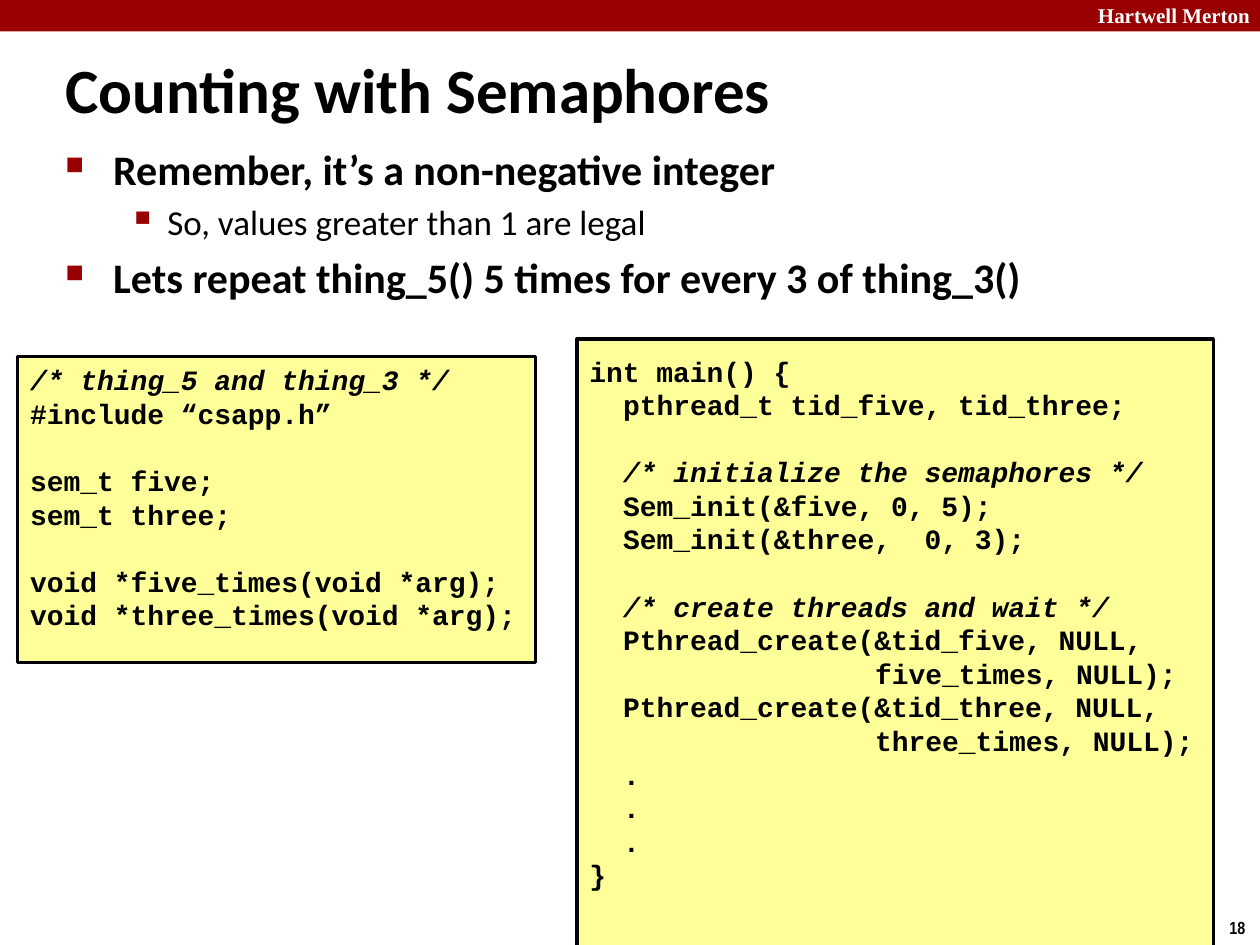
from lxml.etree import SubElement
from pptx import Presentation
from pptx.dml.color import RGBColor
from pptx.enum.shapes import MSO_SHAPE
from pptx.enum.text import MSO_ANCHOR, PP_ALIGN
from pptx.oxml.ns import qn
from pptx.util import Inches, Pt

RED = RGBColor(0x99, 0x00, 0x00)
YELLOW = RGBColor(0xFF, 0xFF, 0x99)
BLACK = RGBColor(0, 0, 0)
WHITE = RGBColor(255, 255, 255)

CODE_SIZE = 16
CODE_LINE = 19.2
CODE_CHARACTER = 0.6 * CODE_SIZE

BULLET_LEVELS = [
    {"margin": 0.38, "indent": -0.38, "size": 24, "bold": True, "mark": "■", "scale": 60},
    {"margin": 0.81, "indent": -0.31, "size": 20, "bold": False, "mark": "▪", "scale": 110},
]
BULLETS = [
    (0, "Remember, it’s a non-negative integer"),
    (1, "So, values greater than 1 are legal"),
    (0, "Lets repeat thing_5() 5 times for every 3 of thing_3()"),
]

DECLARATIONS = """\
/* thing_5 and thing_3 */
#include “csapp.h”

sem_t five;
sem_t three;

void *five_times(void *arg);
void *three_times(void *arg);"""

MAIN_FUNCTION = """\
int main() {
  pthread_t tid_five, tid_three;

  /* initialize the semaphores */
  Sem_init(&five, 0, 5);
  Sem_init(&three,  0, 3);

  /* create threads and wait */
  Pthread_create(&tid_five, NULL,
                 five_times, NULL);
  Pthread_create(&tid_three, NULL,
                 three_times, NULL);
  .
  .
  .
}"""


def set_font(paragraph, name, size, color=BLACK, bold=True, italic=False):
    font = paragraph.font
    font.name, font.size = name, Pt(size)
    font.bold, font.italic = bold, italic
    font.color.rgb = color


def set_indent(paragraph, margin, indent=0):
    properties = paragraph._p.get_or_add_pPr()
    properties.set("marL", str(int(margin)))
    properties.set("indent", str(int(indent)))
    return properties


def add_paragraphs(frame, count):
    return [frame.paragraphs[0]] + [frame.add_paragraph() for _ in range(count - 1)]


def add_text_box(slide, box):
    frame = slide.shapes.add_textbox(*map(Inches, box)).text_frame
    frame.word_wrap = True
    return frame


def add_label(slide, box, text, name, size, color=BLACK, align=PP_ALIGN.LEFT):
    frame = add_text_box(slide, box)
    frame.vertical_anchor = MSO_ANCHOR.MIDDLE
    paragraph = frame.paragraphs[0]
    paragraph.text, paragraph.alignment = text, align
    set_font(paragraph, name, size, color)


def add_rectangle(slide, box, color):
    shape = slide.shapes.add_shape(MSO_SHAPE.RECTANGLE, *map(Inches, box))
    shape.shadow.inherit = False
    shape.fill.solid()
    shape.fill.fore_color.rgb = color
    shape.line.fill.background()
    return shape


def add_bullets(slide, box, bullets):
    frame = add_text_box(slide, box)
    for paragraph, (depth, text) in zip(add_paragraphs(frame, len(bullets)), bullets):
        level = BULLET_LEVELS[depth]
        paragraph.text, paragraph.level = text, depth
        paragraph.space_before = Pt(0.2 * level["size"])
        set_font(paragraph, "Calibri", level["size"], bold=level["bold"])
        properties = set_indent(paragraph, Inches(level["margin"]), Inches(level["indent"]))
        defaults = properties.find(qn("a:defRPr"))
        color = SubElement(properties, qn("a:buClr"))
        SubElement(color, qn("a:srgbClr")).set("val", str(RED))
        scale = SubElement(properties, qn("a:buSzPct"))
        scale.set("val", str(level["scale"] * 1000))
        mark = SubElement(properties, qn("a:buChar"))
        mark.set("char", level["mark"])
        if defaults is not None:
            properties.append(defaults)


def add_code(slide, box, code, top_inset):
    shape = add_rectangle(slide, box, YELLOW)
    shape.line.color.rgb = BLACK
    shape.line.width = Pt(2)
    frame = shape.text_frame
    frame.word_wrap = True
    frame.vertical_anchor = MSO_ANCHOR.TOP
    frame.margin_top, frame.margin_bottom = Inches(top_inset), 0

    lines = code.splitlines()
    filled = [index for index, line in enumerate(lines) if line]
    previous = -1
    for paragraph, index in zip(add_paragraphs(frame, len(filled)), filled):
        text = lines[index].lstrip()
        paragraph.text, paragraph.alignment = text, PP_ALIGN.LEFT
        paragraph.line_spacing = Pt(CODE_LINE)
        paragraph.space_before = Pt(CODE_LINE * (index - previous - 1))
        set_indent(paragraph, Pt(CODE_CHARACTER * (len(lines[index]) - len(text))))
        set_font(paragraph, "Courier New", CODE_SIZE, italic=text.startswith("/*"))
        previous = index


def main():
    presentation = Presentation()
    presentation.slide_width, presentation.slide_height = Inches(10), Inches(7.5)
    slide = presentation.slides.add_slide(presentation.slide_layouts[6])

    add_rectangle(slide, (0, 0, 10, 0.25), RED)
    add_label(slide, (8.5, -0.03, 1.52, 0.3), "Hartwell Merton", "Times New Roman", 12,
              WHITE, PP_ALIGN.RIGHT)
    add_label(slide, (9.66, 7.23, 0.34, 0.27), "18", "Arial Narrow", 10)
    add_label(slide, (0.42, 0.39, 8.03, 0.63), "Counting with Semaphores", "Calibri", 36)
    add_bullets(slide, (0.42, 1.09, 9.35, 2.16), BULLETS)
    add_code(slide, (0.14, 2.83, 4.11, 2.43), DECLARATIONS, 0.05)
    add_code(slide, (4.58, 2.69, 5.05, 4.85), MAIN_FUNCTION, 0.12)

    presentation.save("out.pptx")


if __name__ == "__main__":
    main()
